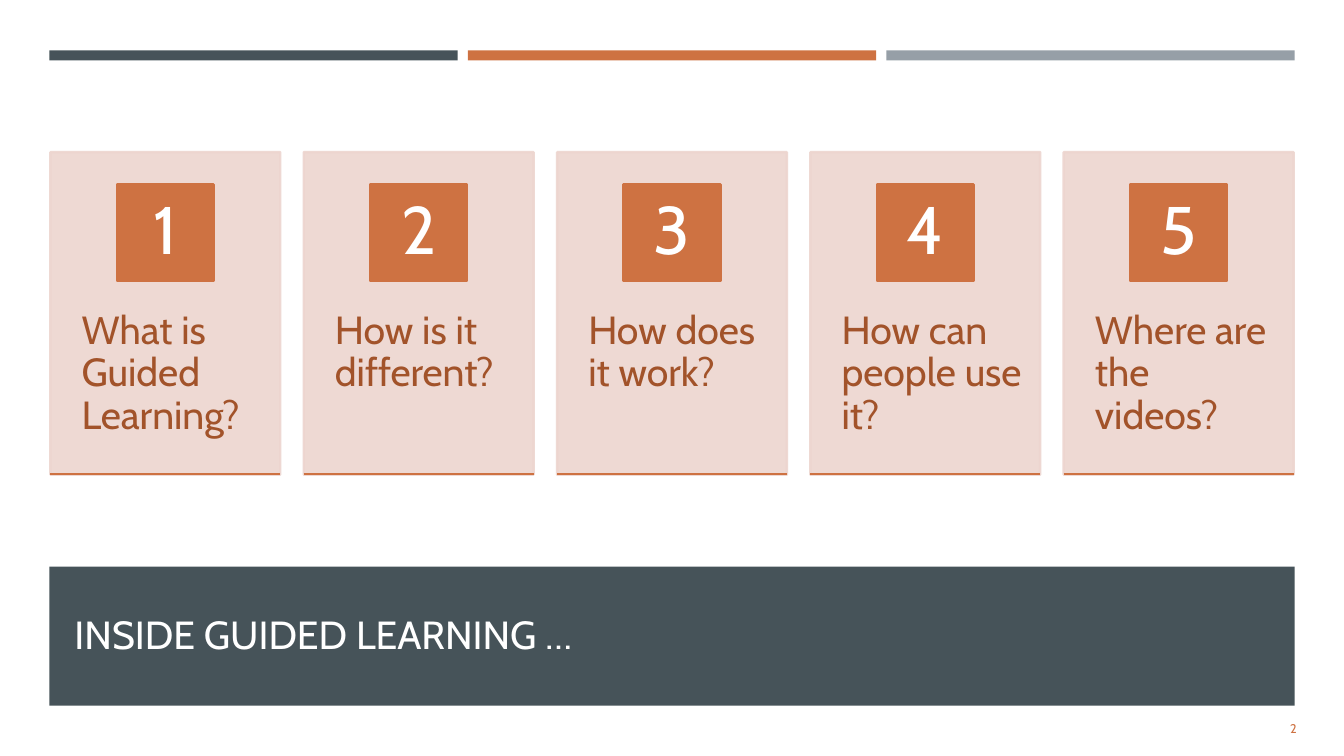
from lxml import etree
from pptx import Presentation
from pptx.dml.color import RGBColor
from pptx.enum.shapes import MSO_CONNECTOR, MSO_SHAPE
from pptx.enum.text import MSO_ANCHOR, PP_ALIGN
from pptx.oxml.ns import qn
from pptx.util import Inches, Pt

RECTANGLE = MSO_SHAPE.RECTANGLE
STRAIGHT = MSO_CONNECTOR.STRAIGHT
TOP, MIDDLE = MSO_ANCHOR.TOP, MSO_ANCHOR.MIDDLE
LEFT, CENTER, RIGHT = PP_ALIGN.LEFT, PP_ALIGN.CENTER, PP_ALIGN.RIGHT

FONT = "Cabin"
SLATE, ORANGE, GRAY = "465359", "CE7242", "969FA7"
BLUSH, RUST, WHITE = "EDD5CF", "A2532A", "FFFFFF"
LINE_WIDTH = 1.75
QUESTIONS = [
    "What is Guided Learning?",
    "How is it different?",
    "How does it work?",
    "How can people use it?",
    "Where are the videos?",
]


def rgb(color):
    return RGBColor.from_string(color)


def set_opacity(fill, percent):
    """Make every solid colour below the given XML element partly transparent."""
    for color in fill.iter(qn("a:srgbClr")):
        etree.SubElement(color, qn("a:alpha")).set("val", str(percent * 1000))


def add_rectangle(slide, left, top, width, height, color, outlined=False):
    shape = slide.shapes.add_shape(
        RECTANGLE, Inches(left), Inches(top), Inches(width), Inches(height))
    shape.shadow.inherit = False
    shape.fill.solid()
    shape.fill.fore_color.rgb = rgb(color)
    if outlined:
        shape.line.color.rgb = rgb(color)
        shape.line.width = Pt(LINE_WIDTH)
    else:
        shape.line.fill.background()
    return shape


def write_text(shape, text, size, color, alignment=LEFT, anchor=MIDDLE,
               insets=(0.1, 0.05, 0.1, 0.05), line_spacing=1.0):
    frame = shape.text_frame
    frame.word_wrap = True
    frame.vertical_anchor = anchor
    (frame.margin_left, frame.margin_top,
     frame.margin_right, frame.margin_bottom) = map(Inches, insets)
    frame.text = text
    paragraph = frame.paragraphs[0]
    paragraph.alignment = alignment
    paragraph.line_spacing = line_spacing
    font = paragraph.runs[0].font
    font.name, font.size, font.color.rgb = FONT, Pt(size), rgb(color)


def add_text_box(slide, left, top, width, height, *text, **options):
    box = slide.shapes.add_textbox(
        Inches(left), Inches(top), Inches(width), Inches(height))
    write_text(box, *text, **options)


def add_top_bars(slide, left, top, width, height):
    gap = 0.1
    bar_width = (width - 2 * gap) / 3
    for index, color in enumerate([SLATE, ORANGE, GRAY]):
        add_rectangle(slide, left + index * (bar_width + gap), top,
                      bar_width, height, color)


def add_question_card(slide, left, top, width, height, number, question):
    card = add_rectangle(slide, left, top, width, height, BLUSH, outlined=True)
    set_opacity(card.element.spPr, 90)

    add_text_box(slide, left, top + 1.21, width, height - 1.28,
                 question, 28, RUST, anchor=TOP,
                 insets=(0.31, 0.36, 0.17, 0.36), line_spacing=0.9)

    side = 0.96
    badge = add_rectangle(slide, left + (width - side) / 2, top + 0.32,
                          side, side, ORANGE, outlined=True)
    write_text(badge, str(number), 48, WHITE, alignment=CENTER,
               insets=(0.07, 0.01, 0.07, 0.01), line_spacing=0.9)

    baseline = Inches(top + height - 0.01)
    rule = slide.shapes.add_connector(
        STRAIGHT, Inches(left), baseline, Inches(left + width), baseline)
    rule.line.color.rgb = rgb(ORANGE)
    rule.line.width = Pt(LINE_WIDTH)
    etree.SubElement(rule.element.spPr, qn("a:effectLst"))


def add_question_cards(slide, left, top, width, height):
    card_width = 2.28
    pitch = (width - card_width) / (len(QUESTIONS) - 1)
    for index, question in enumerate(QUESTIONS):
        add_question_card(slide, left + index * pitch, top, card_width, height,
                          index + 1, question)


def add_title_band(slide, left, top, width, height):
    add_rectangle(slide, left, top, width, height, SLATE)
    add_text_box(slide, left + 0.15, top + 0.14, width - 0.3, 1.05,
                 "INSIDE GUIDED LEARNING …", 28, WHITE)


def main():
    presentation = Presentation()
    presentation.slide_width = Inches(13.33)
    presentation.slide_height = Inches(7.5)
    slide = presentation.slides.add_slide(presentation.slide_layouts[6])
    slide.background.fill.solid()
    slide.background.fill.fore_color.rgb = rgb(WHITE)

    add_title_band(slide, 0.49, 5.62, 12.35, 1.38)
    add_top_bars(slide, 0.49, 0.5, 12.35, 0.1)
    add_text_box(slide, 11.81, 7.03, 1.15, 0.4, "2", 9, ORANGE, alignment=RIGHT)
    add_question_cards(slide, 0.5, 1.51, 12.33, 3.2)
    presentation.save("out.pptx")


if __name__ == "__main__":
    main()
